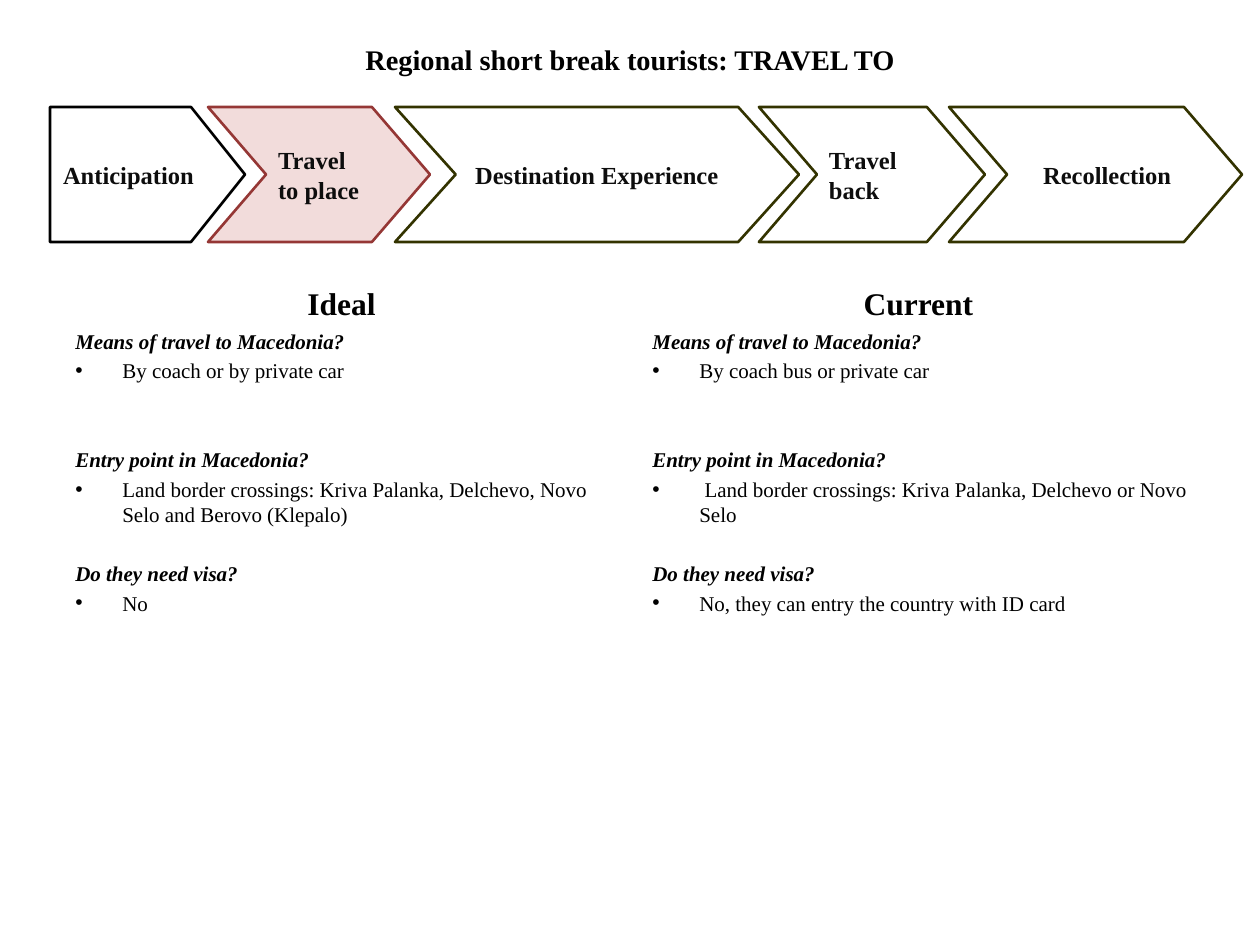
from lxml import etree
from pptx import Presentation
from pptx import util as u
from pptx.dml.color import RGBColor
from pptx.enum import shapes, text
from pptx.oxml.ns import qn

BLACK = RGBColor(0x00, 0x00, 0x00)
INK = RGBColor(0x0D, 0x0D, 0x0D)
WHITE = RGBColor(0xFF, 0xFF, 0xFF)
PINK = RGBColor(0xF2, 0xDC, 0xDB)
RED = RGBColor(0x95, 0x37, 0x35)
OLIVE = RGBColor(0x33, 0x33, 0x00)
FONT = "Times New Roman"
PX = 914400 / 126
INDENT = 47


def px(*lengths):
    return [u.Emu(round(n * PX)) for n in lengths]


def write(p, words, size, color=BLACK, bold=True, italic=False):
    """Set a paragraph's text and format its run."""
    p.text = words
    f = p.runs[0].font
    f.name, f.size, f.bold, f.italic = FONT, u.Pt(size), bold, italic
    f.color.rgb = color


prs = Presentation()
prs.slide_width, prs.slide_height = px(1260, 945)
s = prs.slides.add_slide(prs.slide_layouts[6])

# Title and column headings
headings = [
    ("Regional short break tourists: TRAVEL TO", 16.2, (63, 38, 1134, 42), text.MSO_ANCHOR.MIDDLE),
    ("Ideal", 18, (63, 265, 557, 63), text.MSO_ANCHOR.BOTTOM),
    ("Current", 18, (640, 265, 557, 63), text.MSO_ANCHOR.BOTTOM),
]
for words, size, box, anchor in headings:
    tf = s.shapes.add_textbox(*px(*box)).text_frame
    tf.word_wrap = True
    tf.vertical_anchor = anchor
    p = tf.paragraphs[0]
    write(p, words, size)
    p.alignment = text.PP_ALIGN.CENTER

# Question and answer columns
questions = [
    ("Means of travel to Macedonia?", 0),
    ("Entry point in Macedonia?", 36.2),
    ("Do they need visa?", 19.2),
]
columns = [
    (63, 557, [
        "By coach or by private car",
        "Land border crossings: Kriva Palanka, Delchevo, Novo Selo and Berovo (Klepalo)",
        "No",
    ]),
    (640, 580, [
        "By coach bus or private car",
        " Land border crossings: Kriva Palanka, Delchevo or Novo Selo",
        "No, they can entry the country with ID card",
    ]),
]
for left, width, answers in columns:
    tf = s.shapes.add_textbox(*px(left, 322, width, 600)).text_frame
    tf.word_wrap = True
    for i, ((question, gap), answer) in enumerate(zip(questions, answers)):
        p = tf.add_paragraph() if i else tf.paragraphs[0]
        write(p, question, 12, italic=True)
        p.space_before = u.Pt(gap)

        p = tf.add_paragraph()
        write(p, answer, 12, bold=False)
        p.space_before = u.Pt(2.6)
        pPr = p._p.get_or_add_pPr()
        pPr.set("marL", str(px(INDENT)[0]))
        pPr.set("indent", str(px(-INDENT)[0]))
        etree.SubElement(pPr, qn("a:buFont")).set("typeface", "Arial")
        etree.SubElement(pPr, qn("a:buChar")).set("char", "•")

# Journey stages
PENTAGON, CHEVRON = shapes.MSO_SHAPE.PENTAGON, shapes.MSO_SHAPE.CHEVRON
LEFT, CENTER = text.PP_ALIGN.LEFT, text.PP_ALIGN.CENTER
stages = [
    ("Anticipation", PENTAGON, 50, 195, 0.4, None, BLACK, LEFT, 13),
    ("Travel to place", CHEVRON, 208, 222, 0.43, PINK, RED, LEFT, 12),
    ("Destination Experience", CHEVRON, 395, 404, 0.45, WHITE, OLIVE, CENTER, 13),
    ("Travel back", CHEVRON, 759, 226, 0.43, WHITE, OLIVE, LEFT, 12),
    ("Recollection", CHEVRON, 949, 293, 0.43, WHITE, OLIVE, LEFT, 36),
]
for words, kind, left, width, point, fill, line, align, inset in stages:
    sp = s.shapes.add_shape(kind, *px(left, 107, width, 135))
    sp.adjustments[0] = point
    sp.shadow.inherit = False
    if fill is None:
        sp.fill.background()
    else:
        sp.fill.solid()
        sp.fill.fore_color.rgb = fill
    sp.line.color.rgb = line
    sp.line.width = u.Pt(1.5)
    tf = sp.text_frame
    tf.word_wrap = True
    tf.vertical_anchor = text.MSO_ANCHOR.MIDDLE
    tf.margin_left, tf.margin_right = px(inset, inset if align == CENTER else 0)
    p = tf.paragraphs[0]
    write(p, words, 14, INK)
    p.alignment = align

prs.save("out.pptx")
